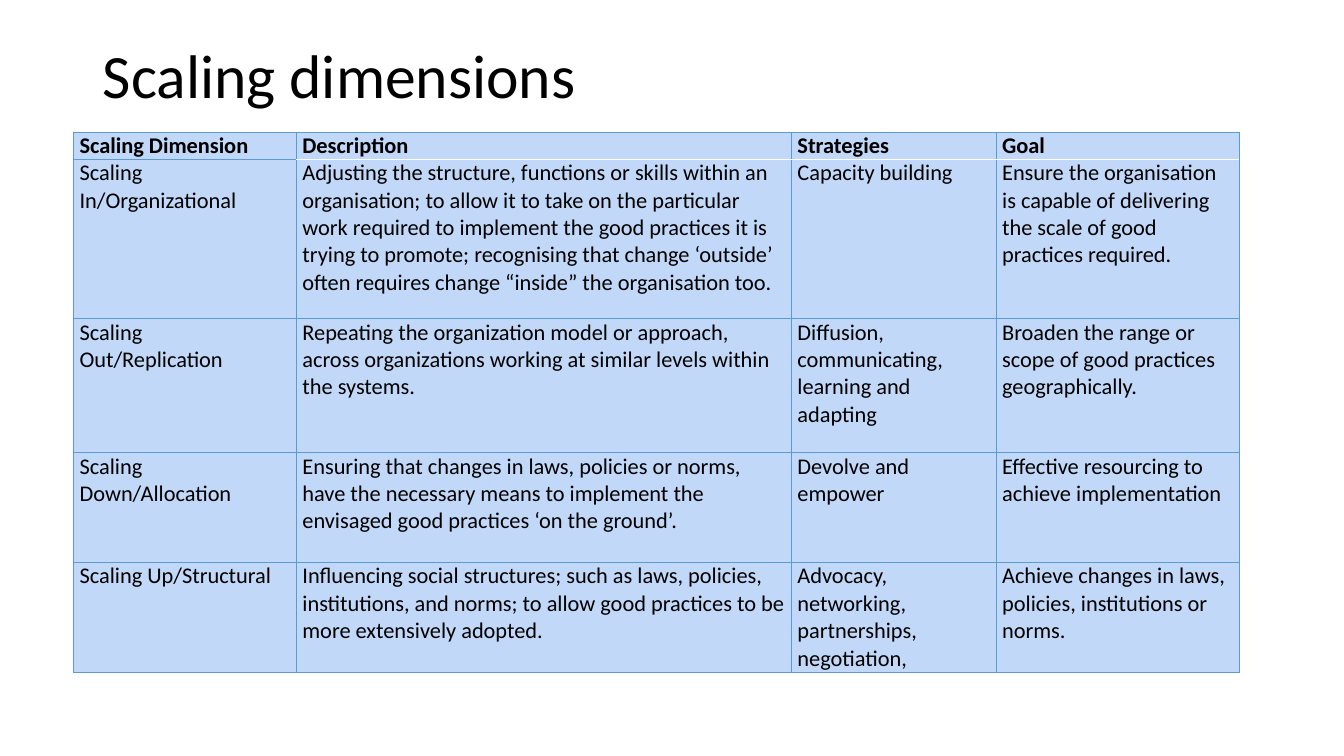
from typing import NamedTuple

from lxml import etree
from pptx import Presentation
from pptx import util as u
from pptx.dml.color import RGBColor
from pptx.enum import text
from pptx.oxml import ns

BLACK = RGBColor(0x00, 0x00, 0x00)
WHITE = RGBColor(0xFF, 0xFF, 0xFF)
BORDER_BLUE = RGBColor(0x5B, 0x9B, 0xD5)
CELL_BLUE = RGBColor(0xC2, 0xD8, 0xF8)
FONT = "Calibri"
COLUMN_WIDTHS = (2.21, 4.91, 2.03, 2.41)
TITLE_ONLY = 5


class Dimension(NamedTuple):
    """One table row; a line feed in a text starts a new paragraph."""
    height: float
    name: str
    description: str
    strategies: str
    goal: str


ROWS = (
    Dimension(0.27, "Scaling Dimension", "Description", "Strategies", "Goal"),
    Dimension(
        1.58, "Scaling In/Organizational",
        "Adjusting the structure, functions or skills within an organisation; "
        "to allow it to take on the particular work required to implement the "
        "good practices it is trying to promote; recognising that change "
        "‘outside’ often requires change “inside” the organisation too.",
        "Capacity building",
        "Ensure the organisation is capable of delivering the scale of good "
        "practices required."),
    Dimension(
        1.33, "Scaling Out/Replication",
        "Repeating the organization model or approach, across organizations "
        "working at similar levels within the systems.",
        "Diffusion, communicating, learning and adapting",
        "Broaden the range or scope of good practices geographically."),
    Dimension(
        1.09, "Scaling Down/Allocation",
        "Ensuring that changes in laws, policies or norms, have the necessary "
        "means to implement the envisaged good practices ‘on the ground’.",
        "Devolve and empower",
        "Effective resourcing to achieve implementation"),
    Dimension(
        1.09, "Scaling Up/Structural",
        "Influencing social structures; such as laws, policies, institutions, "
        "and norms; to allow good practices to be more extensively adopted.",
        "Advocacy, networking,\npartnerships,\nnegotiation,",
        "Achieve changes in laws, policies, institutions or norms."),
)


def add_text(paragraph, content: str, size: float, bold: bool = False) -> None:
    run = paragraph.add_run()
    run.text = content
    run.font.name = FONT
    run.font.size = u.Pt(size)
    run.font.bold = bold
    run.font.color.rgb = BLACK


def add_border(cell, side: str, color: RGBColor, width: float) -> None:
    properties = cell._tc.get_or_add_tcPr()
    line = etree.SubElement(properties, ns.qn(f"a:ln{side}"), w=str(u.Pt(width)))
    fill = etree.SubElement(line, ns.qn("a:solidFill"))
    etree.SubElement(fill, ns.qn("a:srgbClr"), val=str(color))


def format_cell(cell, content: str, row: int, column: int) -> None:
    cell.margin_left = cell.margin_right = u.Inches(0.06)
    cell.margin_top = cell.margin_bottom = 0
    cell.vertical_anchor = text.MSO_ANCHOR.TOP

    # A white rule parts the header from the body, except in the first column
    white_edge = {0: "B", 1: "T"}.get(row) if column > 0 else None
    for side in "LRTB":
        if side == white_edge:
            add_border(cell, side, WHITE, 1)
        else:
            add_border(cell, side, BORDER_BLUE, 0.5)
    cell.fill.solid()
    cell.fill.fore_color.rgb = CELL_BLUE

    frame = cell.text_frame
    for index, line in enumerate(content.split("\n")):
        paragraph = frame.add_paragraph() if index else frame.paragraphs[0]
        add_text(paragraph, line, 16, bold=row == 0)


def add_title(slide, content: str) -> None:
    title = slide.shapes.title
    title.left, title.top = u.Inches(0.92), u.Inches(0.4)
    title.width, title.height = u.Inches(11.5), u.Inches(1.45)
    frame = title.text_frame
    frame.word_wrap = True
    frame.auto_size = text.MSO_AUTO_SIZE.NONE
    frame.vertical_anchor = text.MSO_ANCHOR.TOP
    paragraph = frame.paragraphs[0]
    paragraph.alignment = text.PP_ALIGN.LEFT
    paragraph.line_spacing = 0.9
    add_text(paragraph, content, 44)


def add_dimension_table(slide) -> None:
    table = slide.shapes.add_table(
        len(ROWS), len(COLUMN_WIDTHS), u.Inches(0.73), u.Inches(1.31),
        u.Inches(sum(COLUMN_WIDTHS)),
        u.Inches(sum(dimension.height for dimension in ROWS))).table
    table.horz_banding = False
    for column, width in zip(table.columns, COLUMN_WIDTHS):
        column.width = u.Inches(width)
    for row, (height, *contents) in enumerate(ROWS):
        table.rows[row].height = u.Inches(height)
        for column, content in enumerate(contents):
            format_cell(table.cell(row, column), content, row, column)


def main() -> None:
    presentation = Presentation()
    presentation.slide_width = u.Inches(13.33)
    presentation.slide_height = u.Inches(7.5)
    slide = presentation.slides.add_slide(presentation.slide_layouts[TITLE_ONLY])
    add_title(slide, "Scaling dimensions")
    add_dimension_table(slide)
    presentation.save("out.pptx")


if __name__ == "__main__":
    main()
